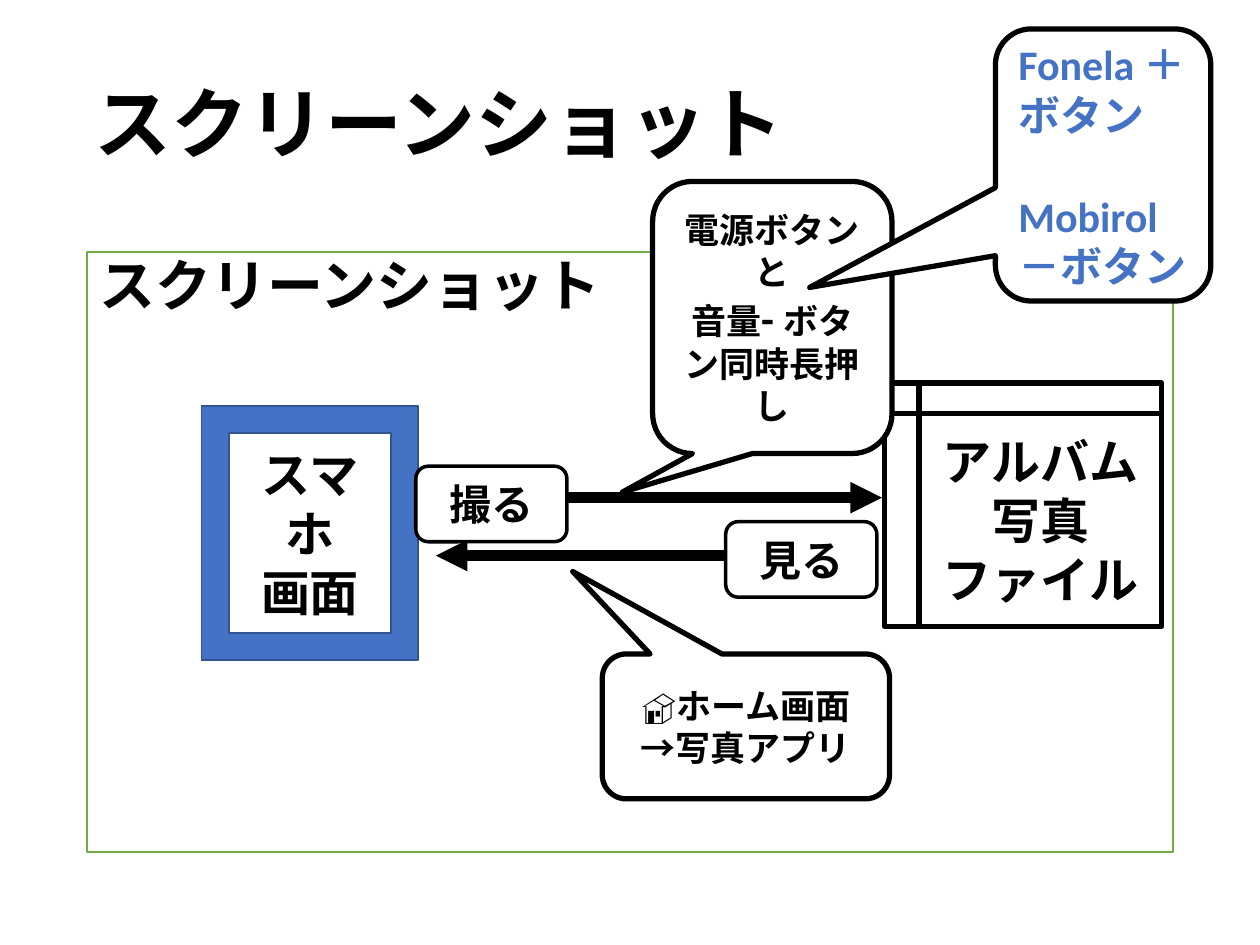
from dataclasses import dataclass

import pptx
import pptx.dml.color
import pptx.enum.shapes
import pptx.enum.text
import pptx.oxml.ns
import pptx.util
from pptx.util import Inches

Geometry = pptx.enum.shapes.MSO_SHAPE
Align = pptx.enum.text.PP_ALIGN
Anchor = pptx.enum.text.MSO_ANCHOR


@dataclass(frozen=True)
class Theme:
    font: str = "Calibri"
    ink: str = "000000"
    paper: str = "FFFFFF"
    blue: str = "4472C4"
    dark_blue: str = "325491"
    green: str = "70AD47"
    title: int = 44
    heading: int = 32
    storage: int = 28
    action: int = 24
    note: int = 20


THEME = Theme()


@dataclass(frozen=True)
class Box:
    geometry: int
    at: tuple[float, float, float, float]
    lines: tuple[str, ...]
    size: int
    outline: float = 3
    fill: str = THEME.paper
    edge: str = THEME.ink
    ink: str = THEME.ink
    align: int = Align.CENTER
    gap: float = 0
    pointer: tuple[float, float] | None = None


@dataclass(frozen=True)
class Arrow:
    start: float
    end: float
    y: float


def rgb(value: str) -> pptx.dml.color.RGBColor:
    return pptx.dml.color.RGBColor.from_string(value)


def place(shape, at: tuple[float, float, float, float]) -> None:
    shape.left, shape.top, shape.width, shape.height = map(Inches, at)


def paint(shape, fill: str, edge: str, width: float) -> None:
    shape.fill.solid()
    shape.fill.fore_color.rgb = rgb(fill)
    shape.line.color.rgb = rgb(edge)
    shape.line.width = pptx.util.Pt(width)


def style(paragraph, size: int, ink: str, align: int) -> None:
    paragraph.alignment = align
    paragraph.font.name = THEME.font
    paragraph.font.size = pptx.util.Pt(size)
    paragraph.font.bold = True
    paragraph.font.color.rgb = rgb(ink)


def fill_placeholder(holder, at, text: str, size: int, anchor: int) -> None:
    place(holder, at)
    holder.text_frame.text = text
    holder.text_frame.vertical_anchor = anchor
    paragraph = holder.text_frame.paragraphs[0]
    style(paragraph, size, THEME.ink, Align.LEFT)
    paragraph.line_spacing = 0.9


def draw_box(slide, box: Box):
    shape = slide.shapes.add_shape(box.geometry, *map(Inches, box.at))
    shape.shadow.inherit = False
    paint(shape, box.fill, box.edge, box.outline)
    if box.pointer:
        shape.adjustments[0], shape.adjustments[1] = box.pointer
    frame = shape.text_frame
    frame.word_wrap = True
    frame.vertical_anchor = Anchor.MIDDLE
    frame.text = "\n".join(box.lines)
    for index, paragraph in enumerate(frame.paragraphs):
        style(paragraph, box.size, box.ink, box.align)
        if index and box.gap:
            paragraph.space_before = pptx.util.Pt(box.gap)
    return shape


def draw_arrow(slide, arrow: Arrow) -> None:
    line = slide.shapes.add_connector(
        pptx.enum.shapes.MSO_CONNECTOR.STRAIGHT,
        Inches(arrow.start), Inches(arrow.y), Inches(arrow.end), Inches(arrow.y))
    line.line.color.rgb = rgb(THEME.ink)
    line.line.width = pptx.util.Pt(6)
    properties = line._element.spPr
    head = pptx.oxml.parse_xml(
        f'<a:tailEnd {pptx.oxml.ns.nsdecls("a")} type="triangle"/>')
    properties.find(pptx.oxml.ns.qn("a:ln")).append(head)
    properties.append(pptx.oxml.parse_xml(
        f'<a:effectLst {pptx.oxml.ns.nsdecls("a")}/>'))


def main() -> None:
    deck = pptx.Presentation()
    deck.slide_width, deck.slide_height = Inches(10), Inches(7.5)
    slide = deck.slides.add_slide(deck.slide_layouts[1])

    # Title and outlined body
    fill_placeholder(slide.shapes.title, (0.65, 0.29, 8.62, 1.45),
                     "スクリーンショット", THEME.title, Anchor.MIDDLE)
    body = slide.placeholders[1]
    fill_placeholder(body, (0.69, 2, 8.62, 4.76),
                     "スクリーンショット", THEME.heading, Anchor.TOP)
    paint(body, THEME.paper, THEME.green, 1)
    heading = body.text_frame.paragraphs[0]
    heading.space_before = pptx.util.Pt(10)
    bullet = heading._p.get_or_add_pPr()
    bullet.set("marL", "0")
    bullet.set("indent", "0")
    no_bullet = pptx.oxml.parse_xml(f'<a:buNone {pptx.oxml.ns.nsdecls("a")}/>')
    bullet.find(pptx.oxml.ns.qn("a:defRPr")).addprevious(no_bullet)

    # Phone screen, the arrow to the album, and the album
    draw_box(slide, Box(Geometry.FRAME, (1.6, 3.22, 1.72, 2.02),
                        ("スマホ", "画面"), THEME.storage, outline=1,
                        fill=THEME.blue, edge=THEME.dark_blue))
    draw_arrow(slide, Arrow(4.37, 7, 3.95))
    draw_box(slide, Box(Geometry.FLOWCHART_INTERNAL_STORAGE, (7.02, 3.04, 2.2, 1.93),
                        ("アルバム", "写真", "ファイル"), THEME.storage))

    # How to take and how to view
    callout = Geometry.ROUNDED_RECTANGULAR_CALLOUT
    take_note = draw_box(slide, Box(callout, (5.18, 1.44, 1.9, 2.16),
                                    ("電源ボタンと", "音量"), THEME.note,
                                    pointer=(-0.627, 0.642)))
    volume = take_note.text_frame.paragraphs[1]
    minus = volume.add_run()
    minus.text = "- "
    minus.font.size = pptx.util.Pt(THEME.action)
    volume.add_run().text = "ボタン同時長押し"
    draw_box(slide, Box(callout, (4.78, 5.19, 2.28, 1.15),
                        ("🏠ホーム画面", "→写真アプリ"), THEME.note,
                        pointer=(-0.603, -1.069)))
    draw_arrow(slide, Arrow(6.15, 3.46, 4.41))

    # Action labels on the arrows
    for action, left, top in (("撮る", 3.3, 3.7), ("見る", 5.76, 4.14)):
        draw_box(slide, Box(Geometry.ROUNDED_RECTANGLE, (left, top, 1.2, 0.6),
                            (action,), THEME.action, outline=2))

    # Button by type of phone
    draw_box(slide, Box(callout, (7.9, 0.23, 1.71, 2.16),
                        ("Fonela ＋ボタン", "Mobirol －ボタン"), THEME.action,
                        ink=THEME.blue, align=Align.LEFT, gap=29,
                        pointer=(-1.362, 0.45)))

    deck.save("out.pptx")


if __name__ == "__main__":
    main()
